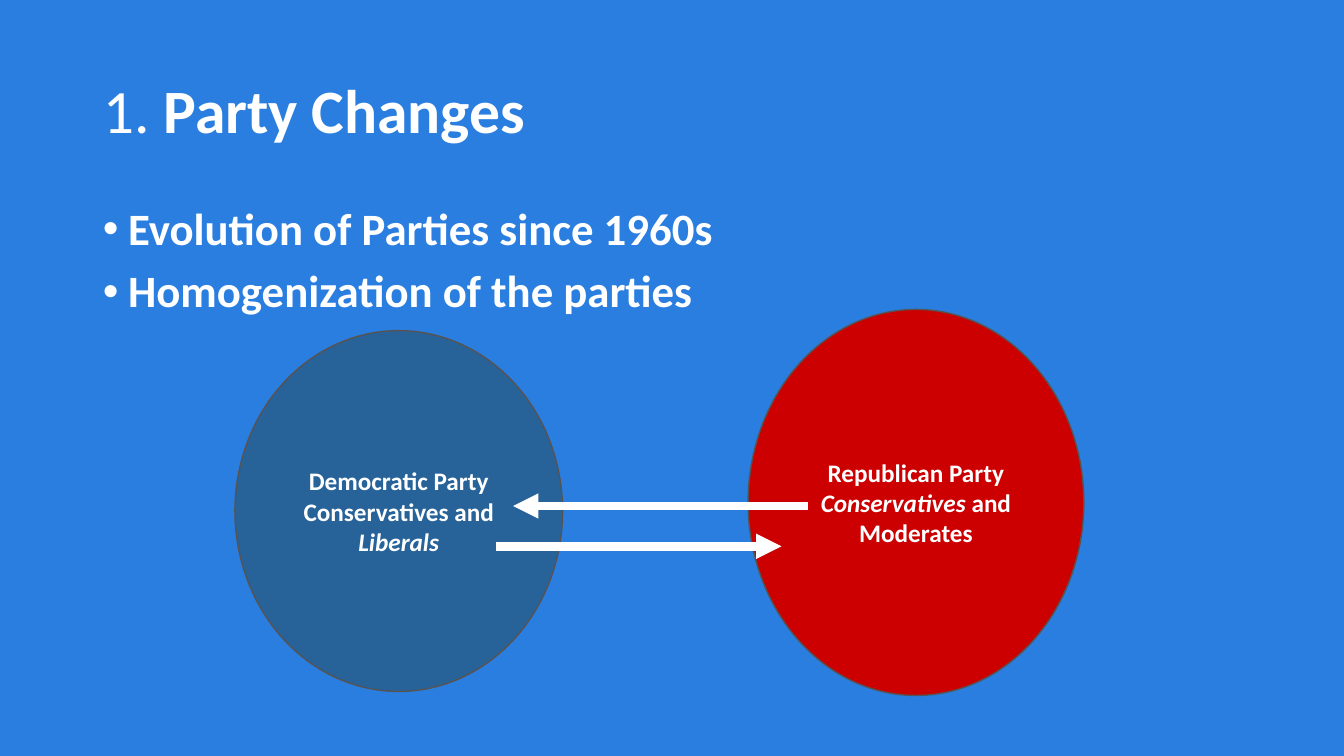
"""Builds the Party Changes slide."""
from lxml.etree import SubElement
from pptx import Presentation
from pptx.dml.color import RGBColor
from pptx.enum.shapes import MSO_CONNECTOR, MSO_SHAPE
from pptx.enum.text import MSO_ANCHOR, MSO_AUTO_SIZE, PP_ALIGN
from pptx.oxml.ns import qn
from pptx.util import Inches, Pt

COLORS = {"back": "2A7EDF", "text": "FFFFFF", "outline": "575353",
          "democrats": "276399", "republicans": "CC0000"}
TITLE = [[("1. ", ""), ("Party Changes", "b")]]
BULLETS = [[("Evolution of Parties since 1960s", "b")],
           [("Homogenization of the parties", "b")]]
PARTIES = [
    ("democrats", (2.33, 3.28, 3.25, 3.58),
     [[("Democratic Party Conservatives and ", "b"), ("Liberals", "bi")]]),
    ("republicans", (7.42, 3.07, 3.33, 3.83),
     [[("Republican Party", "b")],
      [("Conservatives", "bi"), (" and Moderates", "b")]]),
]
ARROWS = [(8.01, 5.09, 5.02), (4.92, 7.75, 5.42)]


def rgb(name):
    return RGBColor.from_string(COLORS[name])


def place(sp, box):
    sp.left, sp.top, sp.width, sp.height = map(Inches, box)


def write(tf, paragraphs, size, align, anchor, spacing=1.0, before=0):
    tf.word_wrap = True
    tf.auto_size = MSO_AUTO_SIZE.NONE
    tf.vertical_anchor = anchor
    for i, runs in enumerate(paragraphs):
        p = tf.add_paragraph() if i else tf.paragraphs[0]
        p.alignment = align
        p.line_spacing = spacing
        p.space_before = Pt(before)
        p.font.size = Pt(size)
        p.font.name = "Calibri"
        p.font.color.rgb = rgb("text")
        for text, style in runs:
            r = p.add_run()
            r.text = text
            r.font.bold = "b" in style
            r.font.italic = "i" in style


def add_bullet(p):
    pPr = p._p.get_or_add_pPr()
    pPr.set("marL", str(Inches(0.25)))
    pPr.set("indent", str(-Inches(0.25)))
    bullet = pPr.makeelement(qn("a:buChar"), {"char": "•"})
    pPr.insert_element_before(bullet, "a:tabLst", "a:defRPr", "a:extLst")


def add_party(s, name, box, paragraphs):
    sp = s.shapes.add_shape(MSO_SHAPE.OVAL, *map(Inches, box))
    sp.shadow.inherit = False
    sp.fill.solid()
    sp.fill.fore_color.rgb = rgb(name)
    sp.line.color.rgb = rgb("outline")
    sp.line.width = Pt(1)
    write(sp.text_frame, paragraphs, 18, PP_ALIGN.CENTER, MSO_ANCHOR.MIDDLE)


def add_arrow(s, start, end, y):
    line = s.shapes.add_connector(
        MSO_CONNECTOR.STRAIGHT, *map(Inches, (start, y, end, y)))
    line.line.color.rgb = rgb("text")
    line.line.width = Pt(6)
    SubElement(line.line._get_or_add_ln(), qn("a:tailEnd"), type="triangle")
    SubElement(line._element.spPr, qn("a:effectLst"))


def main():
    prs = Presentation()
    prs.slide_width, prs.slide_height = Inches(13.33), Inches(7.5)
    s = prs.slides.add_slide(prs.slide_layouts[1])
    s.background.fill.solid()
    s.background.fill.fore_color.rgb = rgb("back")

    title, body = s.shapes.title, s.placeholders[1]
    place(title, (0.92, 0.4, 11.5, 1.45))
    write(title.text_frame, TITLE, 44, PP_ALIGN.LEFT, MSO_ANCHOR.MIDDLE, 0.9)
    place(body, (0.92, 2, 11.5, 4.76))
    write(body.text_frame, BULLETS, 32, PP_ALIGN.LEFT, MSO_ANCHOR.TOP, 0.9, 10)
    for p in body.text_frame.paragraphs:
        add_bullet(p)

    for party in PARTIES:
        add_party(s, *party)
    for arrow in ARROWS:
        add_arrow(s, *arrow)
    prs.save("out.pptx")


if __name__ == "__main__":
    main()
